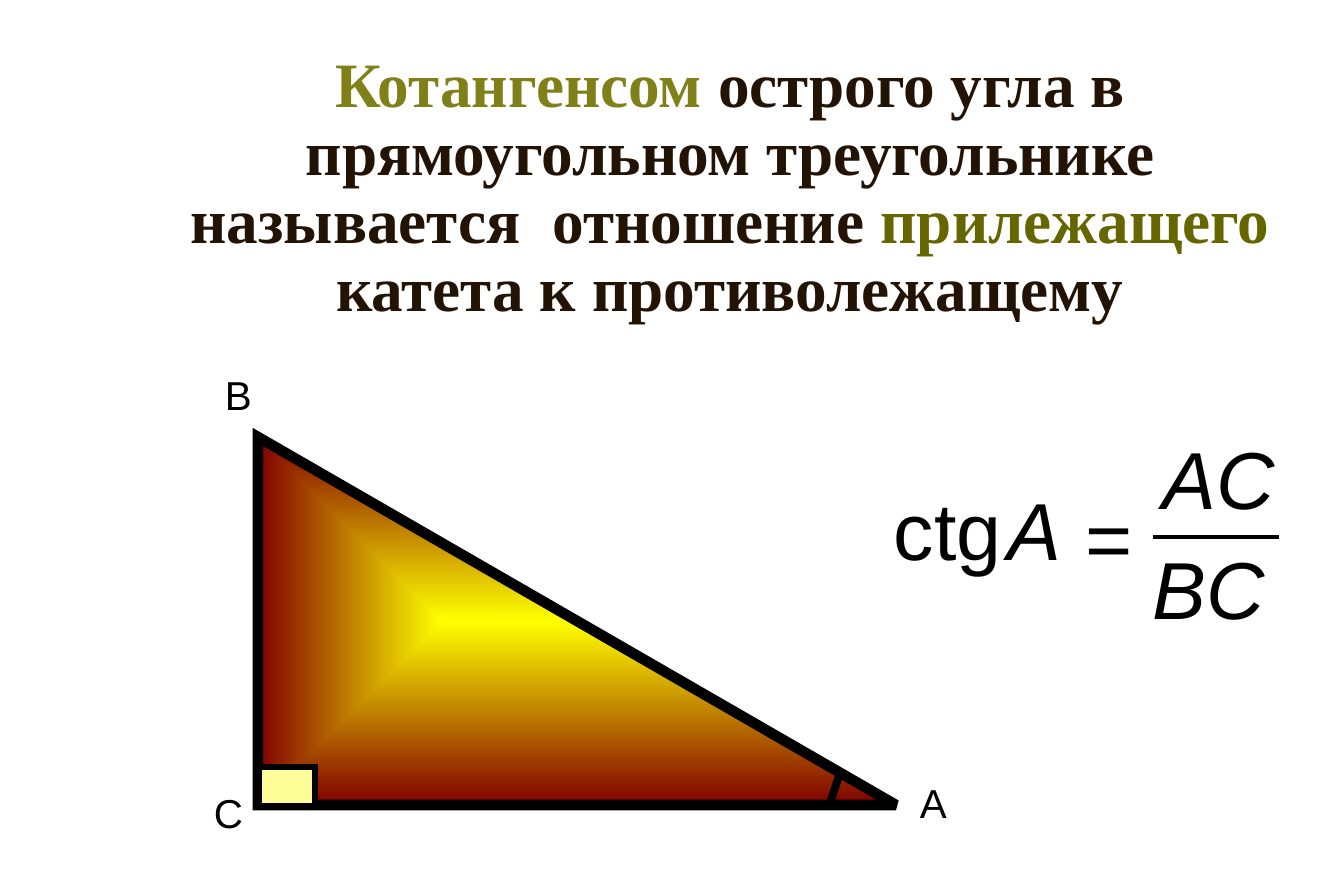
from lxml import etree
from pptx import Presentation
from pptx.dml.color import RGBColor
from pptx.enum.shapes import MSO_CONNECTOR, MSO_SHAPE
from pptx.enum.text import MSO_ANCHOR, MSO_AUTO_SIZE, PP_ALIGN
from pptx.oxml import parse_xml
from pptx.oxml.ns import nsdecls, qn
from pptx.util import Emu, Pt

STRAIGHT = MSO_CONNECTOR.STRAIGHT
RIGHT_TRIANGLE = MSO_SHAPE.RIGHT_TRIANGLE
RECTANGLE = MSO_SHAPE.RECTANGLE
TOP = MSO_ANCHOR.TOP
MIDDLE = MSO_ANCHOR.MIDDLE
NO_AUTOFIT = MSO_AUTO_SIZE.NONE
LEFT = PP_ALIGN.LEFT
CENTER = PP_ALIGN.CENTER

BLACK = RGBColor(0x00, 0x00, 0x00)
DARK_BROWN = RGBColor(0x22, 0x13, 0x04)
TERM_OLIVE = RGBColor(0x80, 0x80, 0x19)
SIDE_OLIVE = RGBColor(0x66, 0x66, 0x00)
YELLOW = RGBColor(0xFF, 0xFF, 0x00)
MAROON = RGBColor(0x80, 0x00, 0x00)
PALE_YELLOW = RGBColor(0xFF, 0xFF, 0x99)

EMU_PER_PX = 914400 / 126.4
NO_INSETS = (0, 0, 0, 0)
LABEL_INSETS = (13, 6, 13, 6)
TITLE_INSETS = (13, 13, 13, 6)


def px(length):
    return Emu(round(length * EMU_PER_PX))


def write_text(frame, runs, size, font="Arial", bold=False, italic=False,
               align=LEFT, anchor=TOP, spacing=0.93, insets=NO_INSETS, wrap=False):
    frame.auto_size = NO_AUTOFIT
    frame.word_wrap = wrap
    frame.vertical_anchor = anchor
    (frame.margin_left, frame.margin_top,
     frame.margin_right, frame.margin_bottom) = map(px, insets)
    line = frame.paragraphs[0]
    line.alignment = align
    line.line_spacing = spacing
    line.space_before = Pt(0)
    for words, color in runs:
        run = line.add_run()
        run.text = words
        run.font.name = font
        run.font.size = Pt(size)
        run.font.bold = bold
        run.font.italic = italic
        run.font.color.rgb = color


def add_label(slide, words, box, size, **text_format):
    label = slide.shapes.add_textbox(*map(px, box))
    write_text(label.text_frame, [(words, BLACK)], size, **text_format)


def add_outlined(slide, preset, box, weight):
    figure = slide.shapes.add_shape(preset, *map(px, box))
    figure.shadow.inherit = False
    figure.line.color.rgb = BLACK
    figure.line.width = Pt(weight)
    etree.SubElement(figure.line._get_or_add_ln(), qn("a:miter"), lim="800000")
    return figure


def fill_from_center(figure, inner, outer):
    figure.fill.background()
    gradient = parse_xml(
        f'<a:gradFill {nsdecls("a")} rotWithShape="0"><a:gsLst>'
        f'<a:gs pos="0"><a:srgbClr val="{inner}"/></a:gs>'
        f'<a:gs pos="100000"><a:srgbClr val="{outer}"/></a:gs></a:gsLst>'
        '<a:path path="shape"><a:fillToRect l="50000" t="50000" r="50000" b="50000"/>'
        '</a:path></a:gradFill>')
    properties = figure._element.spPr
    properties.replace(properties.find(qn("a:noFill")), gradient)


def add_stroke(slide, ends, weight):
    stroke = slide.shapes.add_connector(STRAIGHT, *map(px, ends))
    stroke.line.color.rgb = BLACK
    stroke.line.width = Pt(weight)
    etree.SubElement(stroke._element.spPr, qn("a:effectLst"))


def add_definition(slide):
    title = slide.shapes.title
    title.left, title.top, title.width, title.height = map(px, (168, 9, 1124, 353))
    write_text(title.text_frame, [
        ("Котангенсом", TERM_OLIVE),
        (" острого угла в прямоугольном треугольнике называется  отношение ", DARK_BROWN),
        ("прилежащего", SIDE_OLIVE),
        (" катета к противолежащему", DARK_BROWN),
    ], 36, font="Times New Roman", bold=True, align=CENTER, anchor=MIDDLE,
        spacing=0.9, insets=TITLE_INSETS, wrap=True)


def add_triangle(slide):
    triangle = add_outlined(slide, RIGHT_TRIANGLE, (258, 437, 638, 368), 6)
    fill_from_center(triangle, YELLOW, MAROON)
    for vertex, left, top in (("В", 212, 368), ("С", 201, 786), ("А", 907, 776)):
        add_label(slide, vertex, (left, top, 54, 58), 23, insets=LABEL_INSETS)
    add_stroke(slide, (839, 776, 829, 806), 4.5)
    right_angle = add_outlined(slide, RECTANGLE, (259, 767, 56, 39), 3)
    right_angle.fill.solid()
    right_angle.fill.fore_color.rgb = PALE_YELLOW


def add_formula(slide):
    add_label(slide, "сtg", (894, 488, 107, 90), 46)
    add_label(slide, "=", (1086, 488, 47, 97), 46, spacing=1.0)
    for name, left, top, width in (("A", 1007, 488, 54), ("AC", 1163, 437, 112),
                                   ("BC", 1153, 547, 140)):
        add_label(slide, name, (left, top, width, 90), 46, italic=True)
    add_stroke(slide, (1153, 537, 1279, 537), 1.87)


def main():
    deck = Presentation()
    deck.slide_width, deck.slide_height = px(1344), px(896)
    slide = deck.slides.add_slide(deck.slide_layouts[5])
    add_definition(slide)
    add_triangle(slide)
    add_formula(slide)
    deck.save("out.pptx")


if __name__ == "__main__":
    main()
